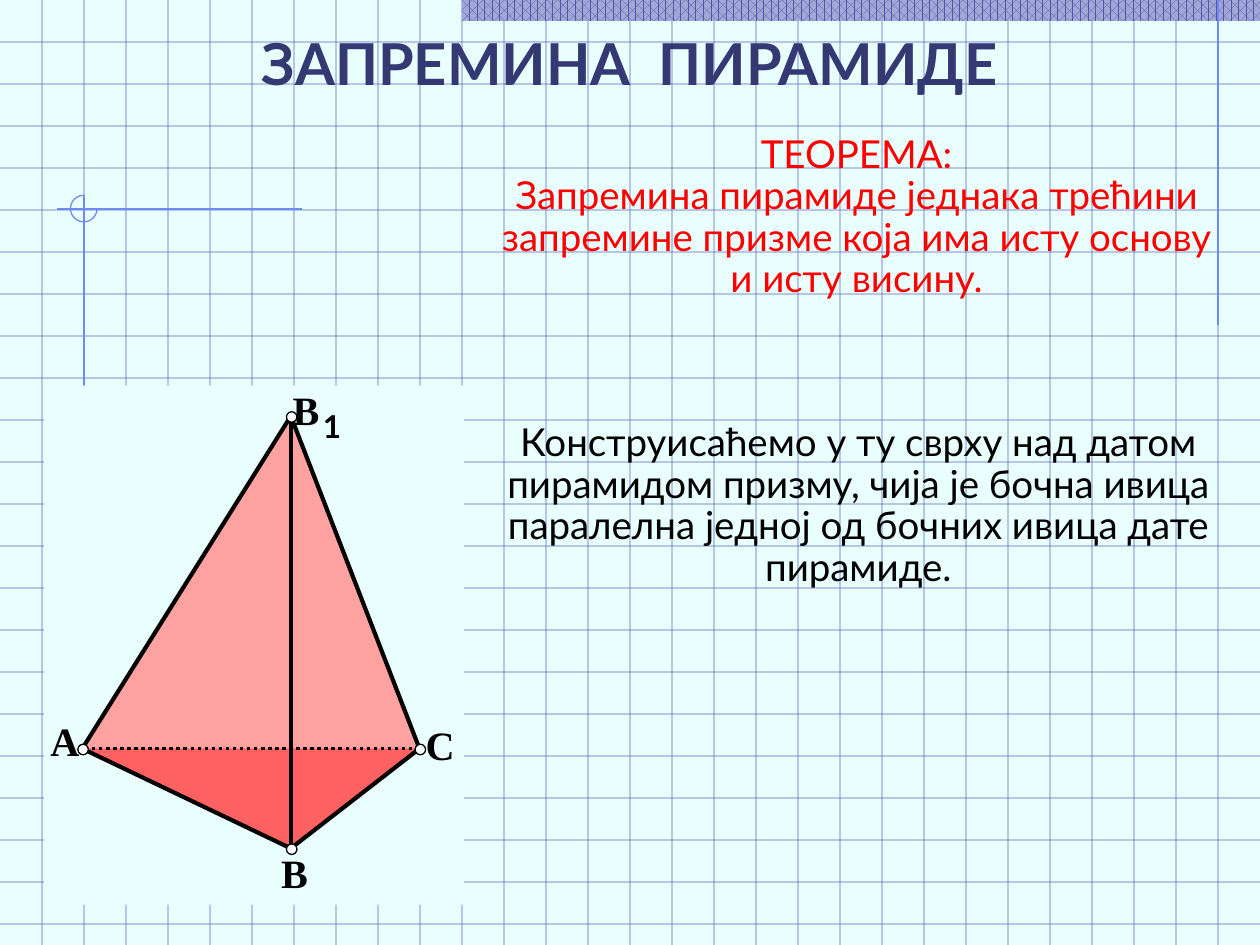
from lxml import etree
from pptx import Presentation
from pptx.dml.color import RGBColor
from pptx.enum import dml, shapes, text
from pptx.oxml import ns
from pptx.util import Pt

W, H = 720, 540
GRID = 24
COLORS = {
    "paper": "E9FFFE", "grid": "4F56AD", "band": "A3A7D5", "accent": "6F89F7",
    "title": "353973", "theorem": "FF0000", "text": "000000", "edge": "010101",
    "side": "FDA1A1", "base": "FD6161", "white": "FFFFFF",
}


def rgb(name):
    return RGBColor.from_string(COLORS[name])


def add_line(parent, start, end, color, width=0.75):
    line = parent.shapes.add_connector(
        shapes.MSO_CONNECTOR.STRAIGHT, *map(Pt, (*start, *end)))
    line.line.color.rgb = rgb(color)
    line.line.width = Pt(width)
    etree.SubElement(line._element.spPr, ns.qn("a:effectLst"))
    return line


def style_shape(sp, fill=None, line=None, width=0.75):
    sp.shadow.inherit = False
    if fill:
        sp.fill.solid()
        sp.fill.fore_color.rgb = rgb(fill)
    else:
        sp.fill.background()
    if line:
        sp.line.color.rgb = rgb(line)
        sp.line.width = Pt(width)
    else:
        sp.line.fill.background()


def add_preset(parent, kind, box, **style):
    sp = parent.shapes.add_shape(kind, *map(Pt, box))
    style_shape(sp, **style)
    return sp


def add_polygon(parent, points, fill):
    points = [tuple(map(Pt, p)) for p in points]
    builder = parent.shapes.build_freeform(*points[0])
    builder.add_line_segments(points[1:], close=True)
    style_shape(builder.convert_to_shape(), fill)


def set_text(sp, words, size, color, font="Lato", bold=False, inset=True,
             align=None, spacing=None, wrap=True):
    tf = sp.text_frame
    tf.word_wrap = wrap
    tf.vertical_anchor = text.MSO_ANCHOR.TOP
    if not inset:
        tf.margin_left = tf.margin_top = tf.margin_right = tf.margin_bottom = 0
    tf.text = words
    for p in tf.paragraphs:
        p.alignment = align
        p.line_spacing = spacing
        p.space_before = Pt(0)
        for r in p.runs:
            r.font.name, r.font.size, r.font.bold = font, Pt(size), bold
            r.font.color.rgb = rgb(color)


def add_backdrop(s, width, height):
    """Squared paper with a patterned band and margin lines."""
    s.background.fill.solid()
    s.background.fill.fore_color.rgb = rgb("paper")
    grid = s.shapes.add_group_shape()
    ends = [((0, y), (width, y)) for y in range(GRID, height, GRID)]
    ends += [((x, 0), (x, height)) for x in range(GRID, width, GRID)]
    for start, end in ends:
        line = add_line(grid, start, end, "grid")
        color = line._element.spPr.find(".//" + ns.qn("a:srgbClr"))
        etree.SubElement(color, ns.qn("a:alpha"), val="50000")

    band = add_preset(s, shapes.MSO_SHAPE.RECTANGLE, (264, 0, width - 264, 12))
    band.fill.patterned()
    band.fill.pattern = dml.MSO_PATTERN.PERCENT_60
    band.fill.fore_color.rgb = rgb("grid")
    band.fill.back_color.rgb = rgb("band")

    add_line(s, (width - GRID, 0), (width - GRID, 186), "accent")
    add_line(s, (172.8, 119.5), (32.4, 119.5), "accent")
    add_line(s, (48, 111.6), (48, 294.5), "accent")
    arc = add_preset(s, shapes.MSO_SHAPE.ARC, (40.3, 111.6, 15.2, 15.2), line="accent")
    arc.adjustments[0], arc.adjustments[1] = 0, 162  # clockwise from 0° to 270°


def add_title(s, box, words):
    title = s.shapes.title
    title.left, title.top, title.width, title.height = map(Pt, box)
    set_text(title, words, 33, "title", bold=True, align=text.PP_ALIGN.CENTER)
    s.shapes.element.append(title.element)  # in front of the grid


def add_statement(s, box, words, color, inset=True):
    sp = s.shapes.add_textbox(*map(Pt, box))
    set_text(sp, words, 22, color, inset=inset,
             align=text.PP_ALIGN.CENTER, spacing=0.9)


def add_pyramid(s, box):
    left, top, width, height = box
    g = s.shapes.add_group_shape()

    def at(x, y):
        return left + x, top + y

    apex, a, b, c = at(141, 17.5), at(21.8, 207.5), at(141, 264.5), at(214.5, 207.5)
    add_preset(g, shapes.MSO_SHAPE.RECTANGLE, box, fill="paper")
    for points, fill in (((apex, c, b), "side"), ((b, apex, a), "side"),
                         ((c, b, a), "base")):
        add_polygon(g, points, fill)

    hidden = add_line(g, c, a, "edge", 0)
    hidden.line.dash_style = dml.MSO_LINE.ROUND_DOT
    for start, end in ((apex, c), (b, c), (a, b), (a, apex), (apex, b)):
        add_line(g, start, end, "edge", 2.38)

    for x, y in (apex, c, b, a):
        add_preset(g, shapes.MSO_SHAPE.OVAL, (x - 2.5, y - 2.5, 6, 6),
                   fill="white", line="edge", width=0)

    serif = "Times New Roman"
    for words, place, size, font in (
            ("B", (142, 0), 23, serif), ("1", (159.3, 12), 18, "Lato"),
            ("C", (218, 191), 23, serif), ("B", (135.4, 264.5), 23, serif),
            ("A", (3.6, 189), 23, serif)):
        label = g.shapes.add_textbox(*map(Pt, (*at(*place), 25, 32)))
        set_text(label, words, size, "text", font, bold=True, inset=False, wrap=False)


def main():
    prs = Presentation()
    prs.slide_width, prs.slide_height = Pt(W), Pt(H)
    s = prs.slides.add_slide(prs.slide_layouts.get_by_name("Title Only"))
    add_backdrop(s, W, H)
    add_title(s, (30, 12, 660, 47), "ЗАПРЕМИНА  ПИРАМИДЕ")
    add_statement(s, (275, 73.5, 429, 118),
                  "ТЕОРЕМА:\nЗапремина пирамиде једнака трећини запремине призме "
                  "која има исту основу и исту висину.", "theorem")
    add_statement(s, (276, 242, 429, 106),
                  "Конструисаћемо у ту сврху над датом пирамидом призму, чија је "
                  "бочна ивица паралелна једној од бочних ивица дате пирамиде.",
                  "text", inset=False)
    add_pyramid(s, (25.2, 220.3, 240, 296.6))
    prs.save("out.pptx")


if __name__ == "__main__":
    main()
